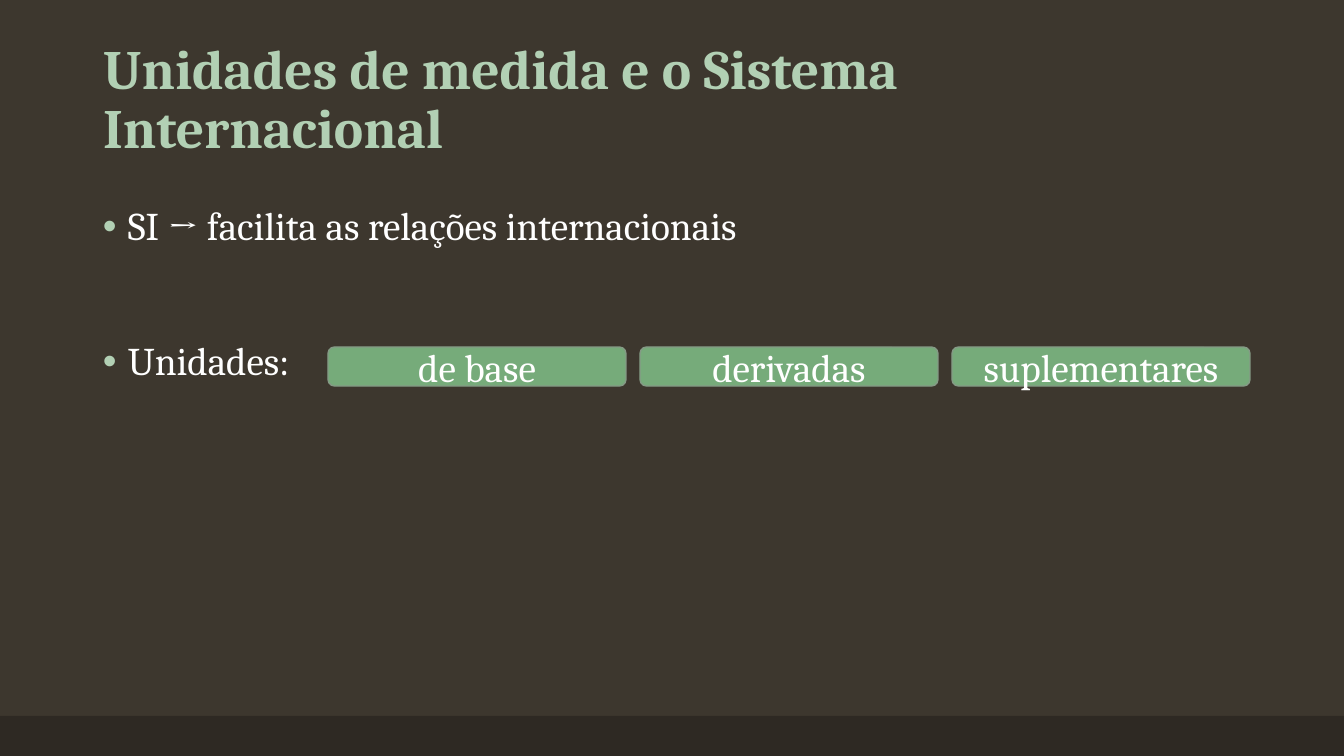
from dataclasses import dataclass

from lxml.etree import SubElement
from pptx import Presentation
from pptx.dml.color import RGBColor as RGB
from pptx.enum.shapes import MSO_SHAPE as Shape
from pptx.enum.text import MSO_ANCHOR as Anchor, MSO_AUTO_SIZE as AutoSize, PP_ALIGN as Align
from pptx.oxml.ns import qn
from pptx.util import Pt

SLIDE_W, SLIDE_H = 1344, 756
EMU_PER_PX = 12192000 / SLIDE_W


@dataclass(frozen=True)
class Theme:
    background: str = "3D372E"
    footer: str = "2E2923"
    accent: str = "B2D0B4"
    box: str = "76AB7A"
    box_line: str = "849A85"
    text: str = "FFFFFF"
    font: str = "Cambria"
    title_size: float = 39.6
    body_size: float = 28
    line_spacing: float = 0.9


THEME = Theme()


def px(length):
    return round(length * EMU_PER_PX)


def place(*lengths):
    return [px(length) for length in lengths]


def style(paragraph, size, color, bold=False):
    for run in paragraph.runs:
        run.font.name = THEME.font
        run.font.size = Pt(size)
        run.font.bold = bold
        run.font.color.rgb = RGB.from_string(color)


def add_title(slide, words):
    title = slide.shapes.title
    title.left, title.top, title.width, title.height = place(93, 40, 1159, 126)
    frame = title.text_frame
    frame.text = words
    frame.word_wrap = True
    frame.auto_size = AutoSize.NONE
    frame.vertical_anchor = Anchor.BOTTOM
    heading = frame.paragraphs[0]
    heading.alignment = Align.LEFT
    heading.line_spacing = THEME.line_spacing
    style(heading, THEME.title_size, THEME.accent, bold=True)


def add_bullet_mark(paragraph):
    props = paragraph._p.get_or_add_pPr()
    props.set("marL", str(px(25)))
    props.set("indent", str(-px(25)))
    color = SubElement(props, qn("a:buClr"))
    SubElement(color, qn("a:srgbClr"), val=THEME.accent)
    SubElement(props, qn("a:buFont"), typeface="Arial")
    SubElement(props, qn("a:buChar"), char="•")


def add_bullets(slide, bullets):
    """Each bullet is its words and the space above it in points."""
    frame = slide.shapes.add_textbox(*place(93, 202, 1159, 480)).text_frame
    frame.word_wrap = True
    frame.text = "\n".join(words for words, _ in bullets)
    for paragraph, (_, space) in zip(frame.paragraphs, bullets):
        paragraph.line_spacing = THEME.line_spacing
        paragraph.space_before = Pt(space)
        add_bullet_mark(paragraph)
        style(paragraph, THEME.body_size, THEME.text)


def add_block(slide, kind, bounds, fill, line=None):
    block = slide.shapes.add_shape(kind, *place(*bounds))
    block.shadow.inherit = False
    block.fill.solid()
    block.fill.fore_color.rgb = RGB.from_string(fill)
    if line:
        block.line.color.rgb = RGB.from_string(line)
        block.line.width = Pt(1)
    else:
        block.line.fill.background()
    return block


def add_unit_boxes(slide, units):
    left, top, width, height, gap = 328, 347, 298, 39, 14
    for index, unit in enumerate(units):
        bounds = (left + index * (width + gap), top, width, height)
        box = add_block(slide, Shape.ROUNDED_RECTANGLE, bounds, THEME.box, THEME.box_line)
        frame = box.text_frame
        frame.text = unit
        frame.vertical_anchor = Anchor.MIDDLE
        frame.paragraphs[0].alignment = Align.CENTER
        style(frame.paragraphs[0], THEME.body_size, THEME.text)


def main():
    deck = Presentation()
    deck.slide_width, deck.slide_height = place(SLIDE_W, SLIDE_H)
    slide = deck.slides.add_slide(deck.slide_layouts[5])

    # Background and footer band
    slide.background.fill.solid()
    slide.background.fill.fore_color.rgb = RGB.from_string(THEME.background)
    add_block(slide, Shape.RECTANGLE, (0, 716, SLIDE_W, 40), THEME.footer)

    # Title and bullets
    add_title(slide, "Unidades de medida e o Sistema Internacional")
    add_bullets(slide, [("SI → facilita as relações internacionais", 18), ("Unidades:", 66)])

    # Kinds of unit
    add_unit_boxes(slide, ["de base", "derivadas", "suplementares"])

    deck.save("out.pptx")


if __name__ == "__main__":
    main()
